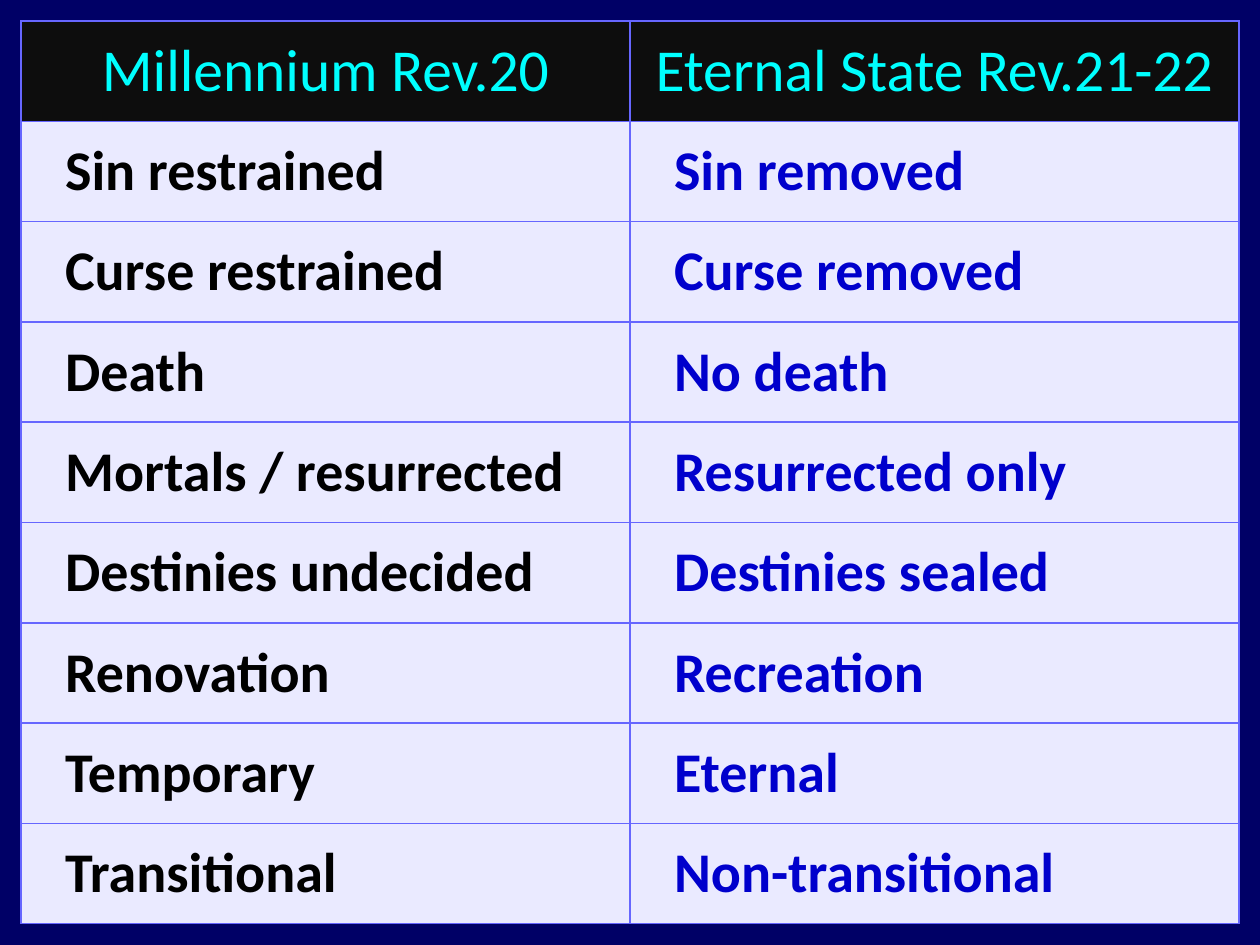
from lxml import etree
from pptx import Presentation
from pptx.dml.color import RGBColor
from pptx.enum.text import MSO_ANCHOR, PP_ALIGN
from pptx.oxml.ns import qn
from pptx.util import Pt

CENTER, LEFT = PP_ALIGN.CENTER, PP_ALIGN.LEFT
MIDDLE = MSO_ANCHOR.MIDDLE

HEADINGS = ("Millennium Rev.20", "Eternal State Rev.21-22")
CONTRASTS = [
    ("Sin restrained", "Sin removed"),
    ("Curse restrained", "Curse removed"),
    ("Death", "No death"),
    ("Mortals / resurrected", "Resurrected only"),
    ("Destinies undecided", "Destinies sealed"),
    ("Renovation", "Recreation"),
    ("Temporary", "Eternal"),
    ("Transitional", "Non-transitional"),
]
COLORS = {
    "background": "000066",
    "border": "6666FF",
    "heading fill": "0D0D0D",
    "heading": "00FFFF",
    "body fill": "EAEAFF",
    "millennium": "000000",
    "eternal": "0000CC",
}
FONT = "Calibri"
SLIDE_W, SLIDE_H, MARGIN = 720, 540, 12
INDENT = 18


def rgb(name):
    return RGBColor.from_string(COLORS[name])


def add_borders(cell):
    props = cell._tc.get_or_add_tcPr()
    for side in ("a:lnL", "a:lnR", "a:lnT", "a:lnB"):
        line = etree.SubElement(props, qn(side), w=str(Pt(1)))
        fill = etree.SubElement(line, qn("a:solidFill"))
        etree.SubElement(fill, qn("a:srgbClr"), val=COLORS["border"])


def fill_cell(cell, text, color, is_heading):
    add_borders(cell)
    cell.fill.solid()
    cell.fill.fore_color.rgb = rgb("heading fill" if is_heading else "body fill")
    cell.vertical_anchor = MIDDLE
    paragraph = cell.text_frame.paragraphs[0]
    paragraph.alignment = CENTER if is_heading else LEFT
    if not is_heading:
        props = paragraph._p.get_or_add_pPr()
        props.set("marL", str(Pt(INDENT)))
        props.set("indent", "0")
    run = paragraph.add_run()
    run.text = text
    run.font.name = FONT
    run.font.size = Pt(34 if is_heading else 32)
    run.font.bold = not is_heading
    run.font.color.rgb = rgb(color)


prs = Presentation()
prs.slide_width, prs.slide_height = Pt(SLIDE_W), Pt(SLIDE_H)
slide = prs.slides.add_slide(prs.slide_layouts[6])
slide.background.fill.solid()
slide.background.fill.fore_color.rgb = rgb("background")

# Comparison table, with an equal margin on every side
rows = [HEADINGS] + CONTRASTS
comparison = slide.shapes.add_table(
    len(rows), len(HEADINGS), Pt(MARGIN), Pt(MARGIN),
    Pt(SLIDE_W - 2 * MARGIN), Pt(SLIDE_H - 2 * MARGIN)).table

for r, texts in enumerate(rows):
    for c, text in enumerate(texts):
        color = "heading" if r == 0 else ("millennium", "eternal")[c]
        fill_cell(comparison.cell(r, c), text, color, r == 0)

prs.save("out.pptx")
